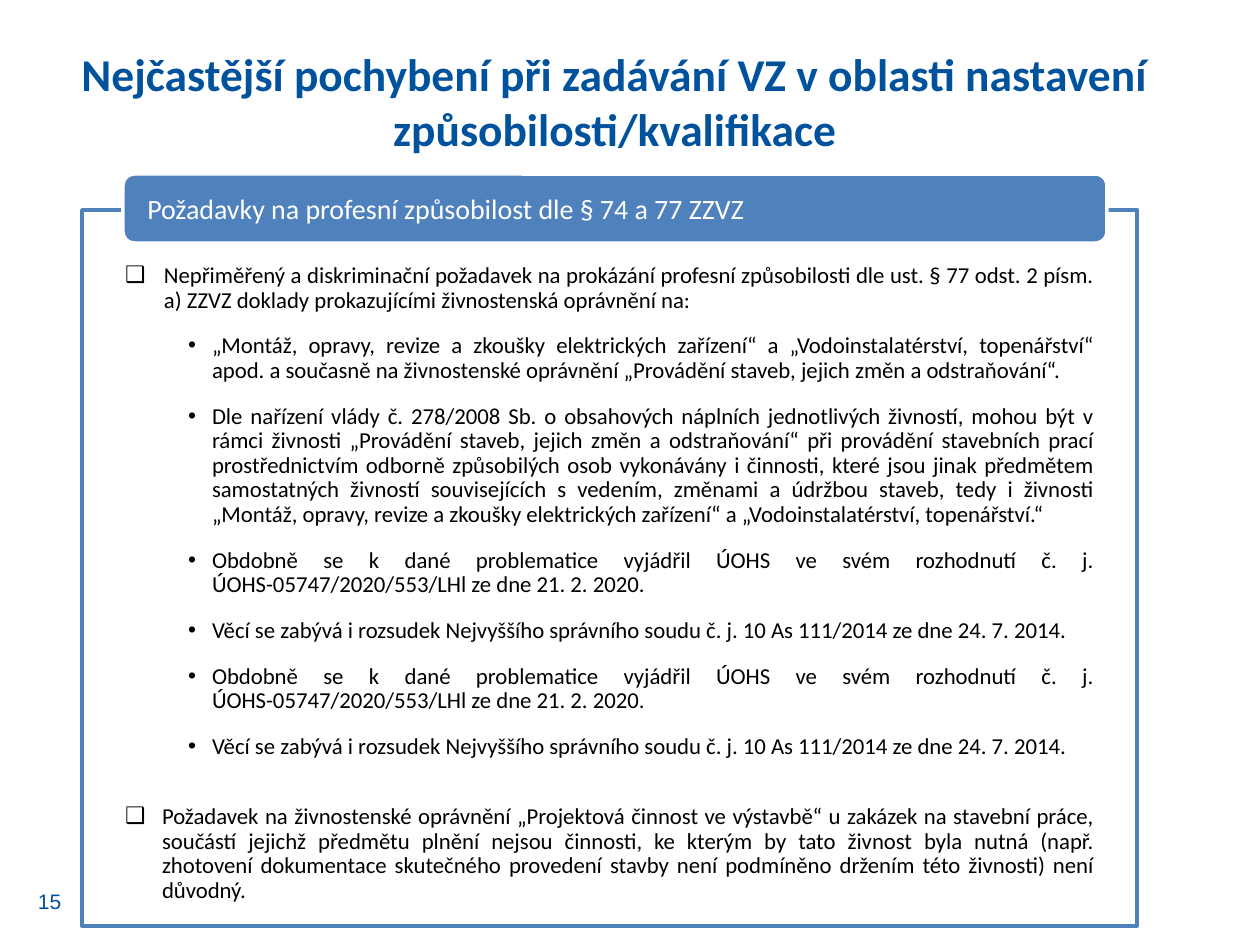
from lxml import etree
from pptx import Presentation
from pptx.dml.color import RGBColor
from pptx.enum.lang import MSO_LANGUAGE_ID
from pptx.enum.shapes import MSO_SHAPE
from pptx.enum.text import MSO_ANCHOR, MSO_AUTO_SIZE, PP_ALIGN
from pptx.oxml.ns import qn
from pptx.util import Pt

PX = 914400 / 126
NAVY = RGBColor(0x00, 0x52, 0x9C)
BLUE = RGBColor(0x4F, 0x81, 0xBD)
WHITE = RGBColor(0xFF, 0xFF, 0xFF)
BLACK = RGBColor(0x00, 0x00, 0x00)
LEFT, CENTER, JUSTIFY = PP_ALIGN.LEFT, PP_ALIGN.CENTER, PP_ALIGN.JUSTIFY
TOP, MIDDLE = MSO_ANCHOR.TOP, MSO_ANCHOR.MIDDLE
RECT, ROUNDED = MSO_SHAPE.RECTANGLE, MSO_SHAPE.ROUNDED_RECTANGLE
NO_AUTOFIT = MSO_AUTO_SIZE.NONE
CZECH = MSO_LANGUAGE_ID.CZECH

TITLE = "Nejčastější pochybení při zadávání VZ v oblasti nastavení způsobilosti/kvalifikace"
HEADING = "Požadavky na profesní způsobilost dle § 74 a 77 ZZVZ"
UNFAIR_DEMAND = (
    "Nepřiměřený a diskriminační požadavek na prokázání profesní způsobilosti dle ust. "
    "§ 77 odst. 2 písm. a) ZZVZ doklady prokazujícími živnostenská oprávnění na:"
)
TRADES = (
    "„Montáž, opravy, revize a zkoušky elektrických zařízení“ a „Vodoinstalatérství, "
    "topenářství“ apod. a současně na živnostenské oprávnění „Provádění staveb, jejich "
    "změn a odstraňování“."
)
REGULATION = (
    "Dle nařízení vlády č. 278/2008 Sb. o obsahových náplních jednotlivých živností, mohou "
    "být v rámci živnosti „Provádění staveb, jejich změn a odstraňování“ při provádění "
    "stavebních prací prostřednictvím odborně způsobilých osob vykonávány i činnosti, které "
    "jsou jinak předmětem samostatných živností souvisejících s vedením, změnami a údržbou "
    "staveb, tedy i živnosti „Montáž, opravy, revize a zkoušky elektrických zařízení“ "
    "a „Vodoinstalatérství, topenářství.“"
)
RULINGS = [
    "Obdobně se k dané problematice vyjádřil ÚOHS ve svém rozhodnutí č. j. "
    "ÚOHS-05747/2020/553/LHl ze dne 21. 2. 2020.",
    "Věcí se zabývá i rozsudek Nejvyššího správního soudu č. j. 10 As 111/2014 "
    "ze dne 24. 7. 2014.",
]
DESIGN_DEMAND = (
    "Požadavek na živnostenské oprávnění „Projektová činnost ve výstavbě“ u zakázek na "
    "stavební práce, součástí jejichž předmětu plnění nejsou činnosti, ke kterým by tato "
    "živnost byla nutná (např. zhotovení dokumentace skutečného provedení stavby není "
    "podmíněno držením této živnosti) není důvodný."
)


def px(length):
    return round(length * PX)


def write(paragraph, text, *, size, color, font="Calibri", bold=False, align=LEFT,
          line=1.0, before=0, after=0, level=0, indent=0, hanging=0, bullet=None):
    properties = paragraph._p.get_or_add_pPr()
    if bullet:
        properties.set("marL", str(px(indent)))
        properties.set("indent", str(px(-hanging)))
        etree.SubElement(properties, qn("a:buFont")).set("typeface", "Arial")
        etree.SubElement(properties, qn("a:buChar")).set("char", bullet)
    paragraph.level = level
    paragraph.alignment = align
    paragraph.line_spacing = line
    paragraph.space_before = Pt(before)
    paragraph.space_after = Pt(after)
    run = paragraph.add_run()
    run.text = text
    run.font.name = font
    run.font.size = Pt(size)
    run.font.bold = bold
    run.font.color.rgb = color
    run.font.language_id = CZECH


class SlideBuilder:
    border = Pt(2)
    item_style = dict(size=13, color=BLACK, align=JUSTIFY, line=0.9, after=6)

    def __init__(self, slide):
        self.slide = slide

    def frame(self, shape, margins, anchor):
        frame = shape.text_frame
        frame.word_wrap = True
        frame.auto_size = NO_AUTOFIT
        frame.vertical_anchor = anchor
        (frame.margin_left, frame.margin_top,
         frame.margin_right, frame.margin_bottom) = map(px, margins)
        return frame

    def place(self, placeholder, box):
        (placeholder.left, placeholder.top,
         placeholder.width, placeholder.height) = map(px, box)
        self.slide.shapes.element.append(placeholder.element)

    def shape(self, kind, box, fill, line, opacity=100):
        shape = self.slide.shapes.add_shape(kind, *map(px, box))
        shape.shadow.inherit = False
        shape.fill.solid()
        shape.fill.fore_color.rgb = fill
        shape.line.color.rgb = line
        shape.line.width = self.border
        if opacity < 100:
            color = shape.element.spPr.find(qn("a:solidFill"))[0]
            etree.SubElement(color, qn("a:alpha")).set("val", str(opacity * 1000))
        return shape

    def panel(self, box):
        self.shape(RECT, box, WHITE, BLUE, opacity=90)

    def banner(self, text, box):
        banner = self.shape(ROUNDED, box, BLUE, WHITE)
        frame = self.frame(banner, (21, 4, 21, 0), MIDDLE)
        write(frame.paragraphs[0], text, size=16, color=WHITE, line=0.9)

    def title(self, text, box):
        title = self.slide.shapes.title
        self.place(title, box)
        frame = self.frame(title, (13, 6, 13, 6), TOP)
        write(frame.paragraphs[0], text, size=26, color=NAVY, bold=True, align=CENTER)

    def items(self, entries, box):
        body = self.slide.placeholders[1]
        self.place(body, box)
        frame = self.frame(body, (71, 49, 71, 11), TOP)
        for number, (text, layout) in enumerate(entries):
            paragraph = frame.add_paragraph() if number else frame.paragraphs[0]
            write(paragraph, text, **self.item_style, **layout)

    def page_number(self, text, box):
        label = self.slide.shapes.add_textbox(*map(px, box))
        frame = self.frame(label, (13, 6, 13, 6), MIDDLE)
        write(frame.paragraphs[0], text, size=12, color=NAVY, font="Arial")


def main():
    deck = Presentation()
    deck.slide_width, deck.slide_height = px(1260), px(945)
    builder = SlideBuilder(deck.slides.add_slide(deck.slide_layouts[1]))

    main_point = dict(level=1, bullet="❑")
    detail = dict(level=2, bullet="•", indent=87, hanging=24, before=6)
    entries = [(UNFAIR_DEMAND, dict(main_point, indent=39, hanging=39))]
    entries += [(text, detail) for text in [TRADES, REGULATION, *RULINGS * 2]]
    entries.append((DESIGN_DEMAND, dict(main_point, indent=37, hanging=37, before=20)))

    builder.page_number("15", (25, 876, 69, 50))
    builder.panel((82, 210, 1055, 716))
    builder.items(entries, (54, 215, 1110, 672))
    builder.banner(HEADING, (123, 174, 984, 69))
    builder.title(TITLE, (67, 40, 1096, 72))
    deck.save("out.pptx")


if __name__ == "__main__":
    main()
